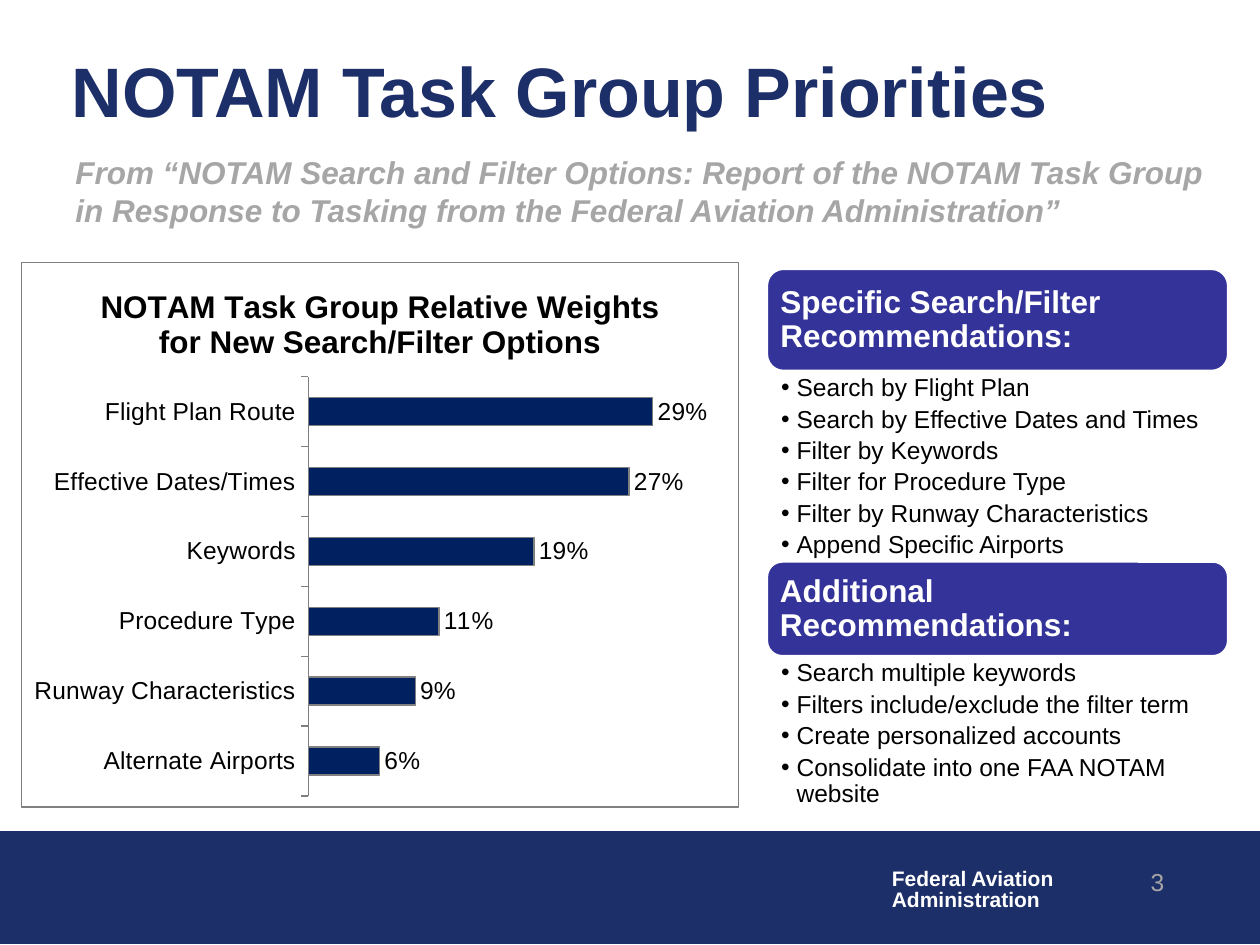
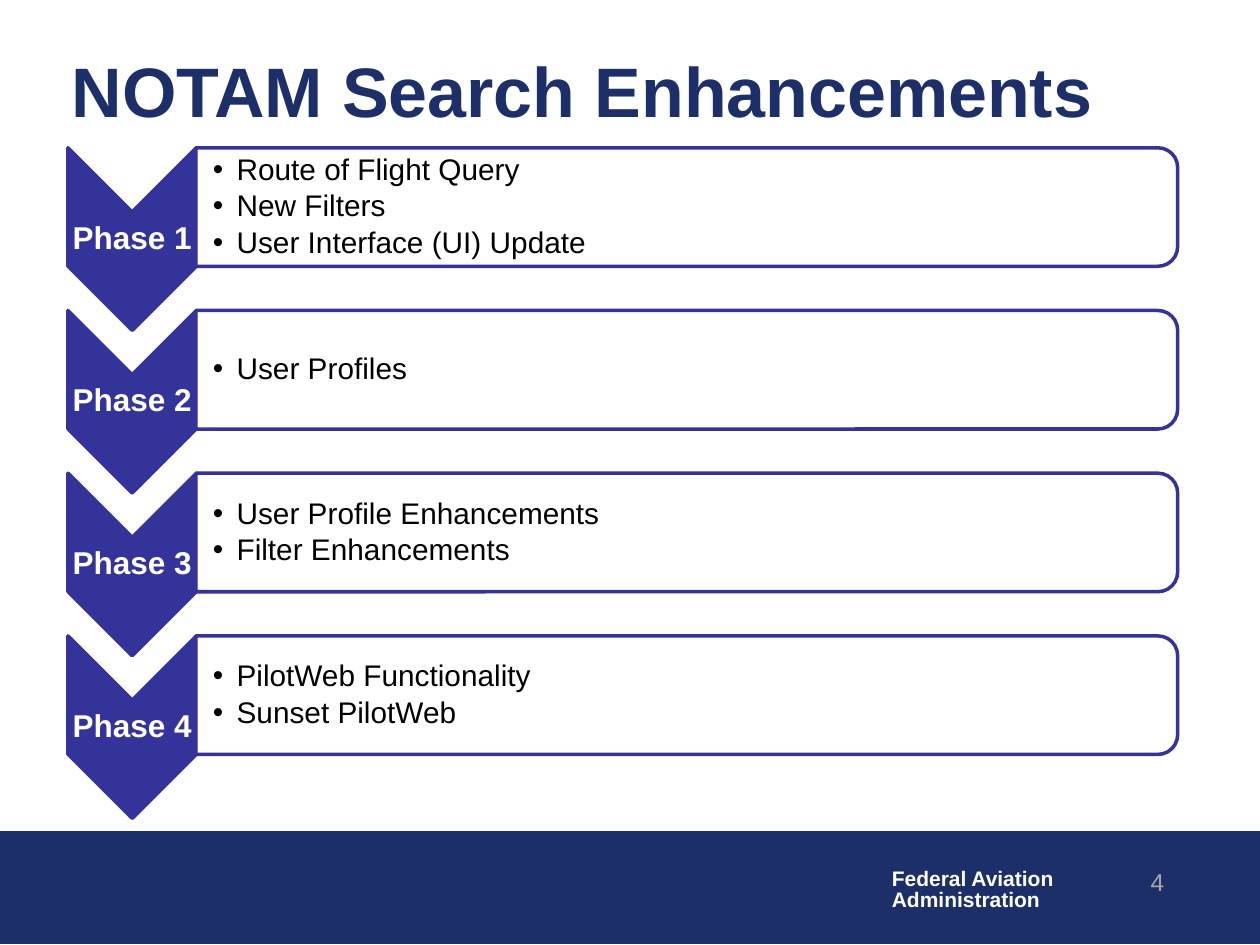
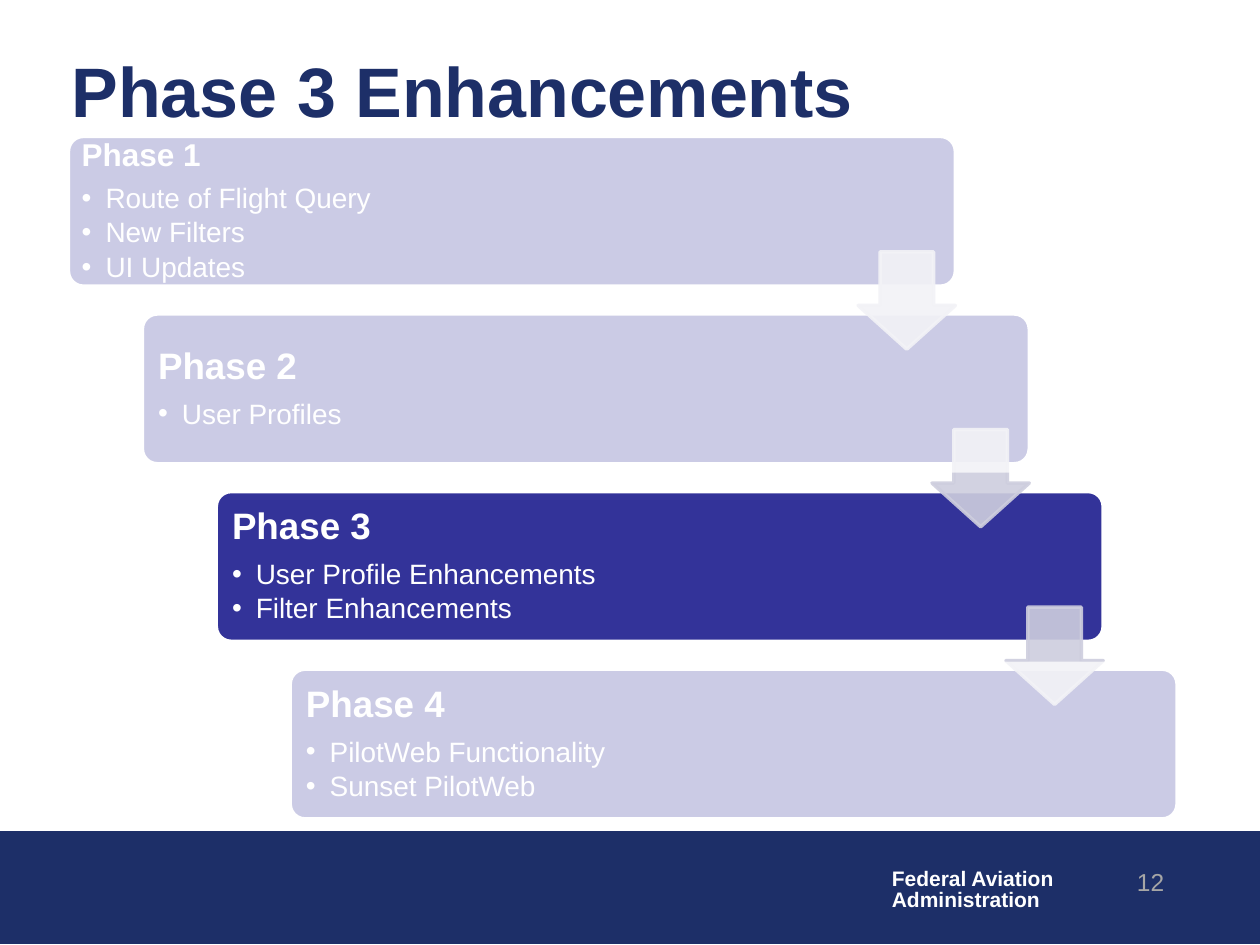
import lxml.etree
import pptx
import pptx.chart.data
import pptx.dml.color
import pptx.enum.chart
import pptx.enum.shapes
import pptx.enum.text
import pptx.oxml
import pptx.oxml.ns
import pptx.util

Cm, Pt = pptx.util.Cm, pptx.util.Pt
RGB = pptx.dml.color.RGBColor
KIND = pptx.enum.shapes.MSO_SHAPE
ALIGN = pptx.enum.text.PP_ALIGN
ANCHOR = pptx.enum.text.MSO_ANCHOR
FIT = pptx.enum.text.MSO_AUTO_SIZE
qn = pptx.oxml.ns.qn

# Style
NAVY = RGB(0x1D, 0x2F, 0x68)
BLUE = RGB(0x33, 0x33, 0x99)
BAR = RGB(0x00, 0x20, 0x60)
PALE = RGB(0xCE, 0xCE, 0xDE)
GREY = RGB(0xA6, 0xA6, 0xA6)
RULE = RGB(0x80, 0x80, 0x80)
WHITE = RGB(0xFF, 0xFF, 0xFF)
BLACK = RGB(0, 0, 0)
FONT = "Arial"

# Phase texts shared by two slides
PHASES = [
    ["Route of Flight Query", "New Filters", "User Interface (UI) Update"],
    ["User Profiles"],
    ["User Profile Enhancements", "Filter Enhancements"],
    ["PilotWeb Functionality", "Sunset PilotWeb"],
]


def fade(node, share):
    """Make the colours under node show at the given percentage."""
    for tint in node.iter(qn("a:srgbClr")):
        lxml.etree.SubElement(tint, qn("a:alpha"), val=str(share * 1000))


class Deck:
    def __init__(self):
        self.prs = pptx.Presentation()
        self.prs.slide_width, self.prs.slide_height = Cm(25.4), Cm(19.05)
        self.slide = None

    def start(self, title, number):
        """Add a slide with its title, bottom band, footer and number."""
        self.slide = self.prs.slides.add_slide(self.prs.slide_layouts[5])
        head = self.slide.shapes.title
        head.left, head.top, head.width, head.height = map(Cm, (1.19, 0.95, 23.55, 1.7))
        frame = self.setup(head.text_frame, ANCHOR.MIDDLE)
        self.line(frame, title, 40, NAVY, bold=True)

        self.shape(KIND.RECTANGLE, (0, 16.76, 25.4, 2.26), NAVY, NAVY, 0.75)
        foot = self.text((17.73, 17.4, 3.81, 1.12))
        foot.word_wrap, foot.auto_size = False, FIT.SHAPE_TO_FIT_TEXT
        for words in ("Federal Aviation", "Administration"):
            self.line(foot, words, 12, WHITE, bold=True, lead=0.85)
        page = self.text((18.44, 17.35, 5.28, 1.27))
        self.line(page, str(number), 14, GREY, align=ALIGN.RIGHT)

    def setup(self, frame, anchor=ANCHOR.TOP, pads=None):
        frame.word_wrap, frame.auto_size = True, FIT.NONE
        frame.vertical_anchor = anchor
        if pads:
            (frame.margin_left, frame.margin_top,
             frame.margin_right, frame.margin_bottom) = map(Cm, pads)
        return frame

    def text(self, box, anchor=ANCHOR.TOP, pads=None):
        made = self.slide.shapes.add_textbox(*map(Cm, box))
        return self.setup(made.text_frame, anchor, pads)

    def line(self, frame, words, size, color, bold=False, italic=False,
             align=ALIGN.LEFT, lead=None, after=0, hang=None):
        """Add a paragraph; after is a share of its size, hang a bullet indent."""
        para = frame.paragraphs[0]
        if para.runs:
            para = frame.add_paragraph()
        if hang:
            props = para._p.get_or_add_pPr()
            props.set("marL", str(Cm(hang)))
            props.set("indent", str(-Cm(hang)))
            lxml.etree.SubElement(props, qn("a:buFont"), typeface=FONT)
            lxml.etree.SubElement(props, qn("a:buChar"), char="•")
        para.alignment = align
        if lead:
            para.line_spacing = lead
        para.space_before = Pt(0)
        para.space_after = Pt(round(size * after, 1))
        run = para.add_run()
        run.text = words
        font = run.font
        font.name, font.size, font.bold, font.italic = FONT, Pt(size), bold, italic
        font.color.rgb = color

    def bullets(self, frame, items, size, color, after=0.15, hang=0.48):
        for item in items:
            self.line(frame, item, size, color, lead=0.9, after=after, hang=hang)

    def shape(self, kind, box, fill, edge=None, width=2, adjust=(),
              show=None, rim=None, turn=False):
        """Add a preset shape; with turn, box is the frame seen after 90 degrees."""
        if turn:
            x, y, w, h = box
            box = (x + (w - h) / 2, y + (h - w) / 2, h, w)
        made = self.slide.shapes.add_shape(kind, *map(Cm, box))
        made.rotation = 90 if turn else 0
        made.shadow.inherit = False
        for place, value in enumerate(adjust):
            made.adjustments[place] = value
        made.fill.solid()
        made.fill.fore_color.rgb = fill
        props = made._element.spPr
        if show:
            fade(props.find(qn("a:solidFill")), show)
        if edge is None:
            made.line.fill.background()
        else:
            made.line.color.rgb = edge
            made.line.width = Pt(width)
            if rim:
                fade(props.find(qn("a:ln")), rim)
        return made

    def chart(self, box, title, names, values):
        data = pptx.chart.data.CategoryChartData(number_format="0%")
        data.categories = names
        data.add_series("Series 1", values)
        kind = pptx.enum.chart.XL_CHART_TYPE.BAR_CLUSTERED
        chart = self.slide.shapes.add_chart(kind, *map(Cm, box), data).chart
        chart.font.name, chart.font.size = FONT, Pt(10)
        chart.font.color.rgb = BLACK
        chart.has_legend = False
        chart.has_title = True
        self.line(chart.chart_title.text_frame, title, 18, BLACK,
                  bold=True, align=ALIGN.CENTER)
        chart.chart_title.include_in_layout = False

        # Axes
        side, scale = chart.category_axis, chart.value_axis
        side.tick_labels.font.size = Pt(14)
        side.major_tick_mark = pptx.enum.chart.XL_TICK_MARK.OUTSIDE
        side.format.line.color.rgb = RULE
        side.has_major_gridlines = scale.has_major_gridlines = False
        scale.minimum_scale, scale.maximum_scale = 0, 0.35
        scale.visible = False

        # Bars and labels
        plot = chart.plots[0]
        plot.gap_width, plot.vary_by_categories = 150, False
        bars = plot.series[0].format
        bars.fill.solid()
        bars.fill.fore_color.rgb = BAR
        bars.line.color.rgb, bars.line.width = RULE, Pt(0.75)
        plot.has_data_labels = True
        tags = plot.data_labels
        tags.show_value = True
        tags.number_format, tags.number_format_is_linked = "0%", False
        tags.position = pptx.enum.chart.XL_LABEL_POSITION.OUTSIDE_END
        tags.font.size = Pt(14)

        # Plot area place and outer border
        space = chart._chartSpace
        area = space.find(".//" + qn("c:plotArea"))
        for old in area.findall(qn("c:layout")):
            area.remove(old)
        layout = lxml.etree.Element(qn("c:layout"))
        area.insert(0, layout)
        manual = lxml.etree.SubElement(layout, qn("c:manualLayout"))
        for tag, value in (("layoutTarget", "inner"), ("xMode", "edge"), ("yMode", "edge"),
                           ("x", 0.4), ("y", 0.21), ("w", 0.58), ("h", 0.77)):
            lxml.etree.SubElement(manual, qn("c:" + tag), val=str(value))
        space.find(qn("c:chart")).addnext(pptx.oxml.parse_xml(
            f'<c:spPr {pptx.oxml.ns.nsdecls("c", "a")}><a:noFill/>'
            f'<a:ln w="{Pt(0.75)}"><a:solidFill><a:srgbClr val="{RULE}"/>'
            '</a:solidFill></a:ln></c:spPr>'))


def weights(deck):
    deck.start("NOTAM Task Group Priorities", 3)
    deck.line(deck.text((1.27, 2.97, 23.5, 1.8)),
              "From “NOTAM Search and Filter Options: Report of the NOTAM Task Group "
              "in Response to Tasking from the Federal Aviation Administration”",
              18, GREY, bold=True, italic=True)

    # Recommendation panels: heading, top, heading height, list height, items
    panels = [
        ("Specific Search/Filter Recommendations:", 5.41, 2.08, 3.84,
         ["Search by Flight Plan", "Search by Effective Dates and Times",
          "Filter by Keywords", "Filter for Procedure Type",
          "Filter by Runway Characteristics", "Append Specific Airports"]),
        ("Additional Recommendations:", 11.31, 1.93, 3.05,
         ["Search multiple keywords", "Filters include/exclude the filter term",
          "Create personalized accounts", "Consolidate into one FAA NOTAM website"]),
    ]
    left, width = 15.45, 9.32
    for head, top, tall, depth, items in panels:
        box = deck.shape(KIND.ROUNDED_RECTANGLE, (left, top, width, tall), BLUE, WHITE)
        frame = deck.setup(box.text_frame, ANCHOR.MIDDLE, [0.18] * 4)
        deck.line(frame, head, 18, WHITE, bold=True, lead=0.9, after=0.35)
        frame = deck.text((left, top + tall, width, depth), pads=(0.3, 0.08, 0.36, 0.08))
        deck.bullets(frame, items, 14, BLACK, after=0.2, hang=0.31)

    deck.chart((0.42, 5.28, 14.48, 11),
               "NOTAM Task Group Relative Weights for New Search/Filter Options",
               ["Alternate Airports", "Runway Characteristics", "Procedure Type",
                "Keywords", "Effective Dates/Times", "Flight Plan Route"],
               [0.06, 0.09, 0.11, 0.19, 0.27, 0.29])


def phases(deck):
    deck.start("NOTAM Search Enhancements", 4)
    for row, items in enumerate(PHASES):
        top = 2.98 + row * 3.28
        deck.shape(KIND.CHEVRON, (1.37, top, 2.59, 3.68), BLUE, BLUE, turn=True)
        label = deck.text((1.37, top + 1.28, 2.59, 1.12), ANCHOR.MIDDLE, [0.03] * 4)
        deck.line(label, f"Phase {row + 1}", 18, WHITE, bold=True,
                  align=ALIGN.CENTER, lead=0.9, after=0.35)
        deck.shape(KIND.ROUND_2_SAME_RECTANGLE, (3.95, top, 19.79, 2.39), WHITE, BLUE,
                   show=90, turn=True)
        frame = deck.text((3.96, top + 0.12, 19.66, 2.16), ANCHOR.MIDDLE,
                          (0.33, 0.03, 0.03, 0.03))
        deck.bullets(frame, items, 17, BLACK)


def steps(deck):
    deck.start("Phase 3 Enhancements", 12)
    across, down = 1.49, 3.58
    short = [PHASES[0][:2] + ["UI Updates"]] + PHASES[1:]
    for row, items in enumerate(short):
        box = deck.shape(KIND.ROUNDED_RECTANGLE,
                         (1.38 + row * across, 2.75 + row * down, 17.88, 3.02),
                         BLUE, WHITE, adjust=[0.1])
        size, pad = (18, 0.18) if row == 0 else (21, 0.23)
        frame = deck.setup(box.text_frame, ANCHOR.MIDDLE, [pad] * 4)
        deck.line(frame, f"Phase {row + 1}", size, WHITE, bold=True, lead=0.9, after=0.35)
        deck.bullets(frame, items, 16, WHITE)
    for row in range(len(short) - 1):
        deck.shape(KIND.DOWN_ARROW, (17.3 + row * across, 5.08 + row * down, 1.96, 1.96),
                   PALE, PALE, adjust=[0.55, 0.45], show=90, rim=90)

    # Veils over the phases not in focus
    for veil in ((2.74, 13.34, 21.79, 3.18), (0.3, 2.67, 22.43, 6.86)):
        deck.shape(KIND.RECTANGLE, veil, WHITE, show=75)


def main():
    deck = Deck()
    weights(deck)
    phases(deck)
    steps(deck)
    deck.prs.save("out.pptx")


if __name__ == "__main__":
    main()
